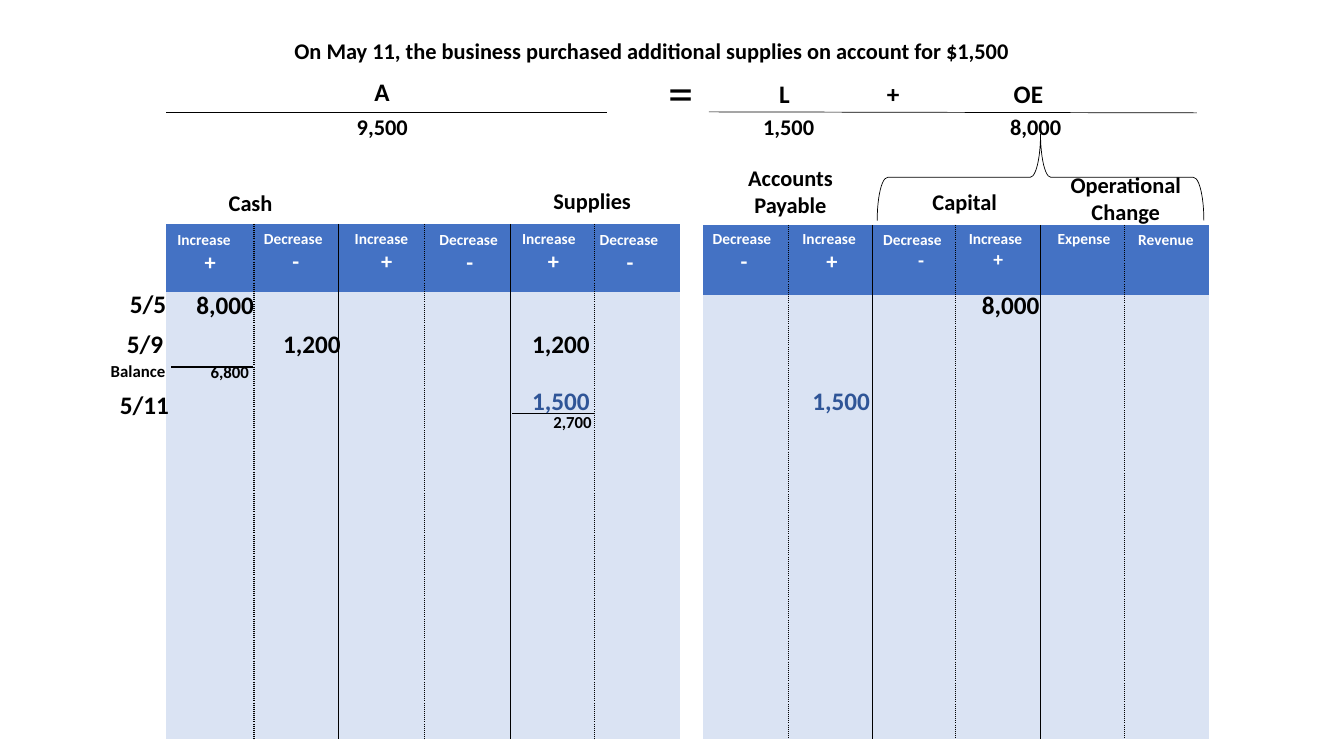
from dataclasses import dataclass

from lxml import etree
from pptx import Presentation
from pptx import util as u
from pptx.dml.color import RGBColor
from pptx.enum import shapes, text
from pptx.oxml.ns import qn

PX = 9144
BLACK, WHITE, BLUE, PALE, ENTRY = "000000", "FFFFFF", "4472C4", "DAE3F3", "2F5597"
LEFT, CENTER = text.PP_ALIGN.LEFT, text.PP_ALIGN.CENTER


@dataclass
class Line:
    words: str
    size: int
    align: text.PP_ALIGN = LEFT


@dataclass
class Label:
    x: int
    y: int
    width: int
    words: str
    size: int = 18
    align: text.PP_ALIGN = LEFT
    color: str = BLACK
    bold: bool = True


@dataclass
class Heading:
    x: int
    y: int
    width: int
    words: str
    sign: str = ""
    sign_size: int = 16


@dataclass
class Grid:
    x: int
    y: int
    columns: list[int]
    rows: list[int]
    header_fill: str = BLUE
    body_fill: str = PALE
    top: str = ""


@dataclass
class Rule:
    x1: int
    y1: int
    x2: int
    y2: int


TITLE = Label(282, 32, 1040, "On May 11, the business purchased additional supplies on account for $1,500", 16)

LEDGERS = [
    Grid(165, 222, [87, 84, 85, 85, 84, 85], [68, 111, 111, 111, 110]),
    Grid(697, 223, [85, 83, 83, 84, 83, 84], [70, 110, 110, 110, 110]),
]

BALANCES = [Grid(x, y, [81], [40], "", "", "solid") for x, y in ((170, 364), (508, 410))]

RULES = [Rule(165, 111, 602, 111), Rule(703, 111, 1187, 112)]

HEADINGS = [
    Heading(166, 223, 85, "Increase", "+"),
    Heading(252, 222, 83, "Decrease", "-"),
    Heading(342, 222, 83, "Increase", "+"),
    Heading(426, 223, 80, "Decrease", "-"),
    Heading(508, 222, 82, "Increase", "+"),
    Heading(585, 223, 80, "Decrease", "-"),
    Heading(697, 222, 82, "Decrease", "-"),
    Heading(786, 222, 78, "Increase", "+"),
    Heading(866, 223, 95, "Decrease", "-", 14),
    Heading(951, 222, 78, "Increase", "+", 14),
    Heading(1039, 222, 89, "Expense"),
    Heading(1119, 223, 82, "Revenue"),
]

LABELS = [
    Label(160, 71, 438, "A", align=CENTER),
    Label(639, 56, 72, "=", 36, CENTER, bold=False),
    Label(743, 73, 70, "L", align=CENTER),
    Label(851, 73, 70, "+", align=CENTER),
    Label(985, 73, 70, "OE", align=CENTER),
    Label(344, 107, 94, "9,500", 16),
    Label(747, 107, 94, "1,500", 16),
    Label(992, 107, 94, "8,000", 16),
    Label(217, 183, 73, "Cash", 16),
    Label(539, 181, 114, "Supplies", 16),
    Label(727, 158, 114, "Accounts\nPayable", 16, CENTER),
    Label(915, 182, 139, "Capital", 16),
    Label(1047, 165, 139, "Operational\nChange", 16, CENTER),
    Label(119, 281, 83, "5/5"),
    Label(185, 282, 84, "8,000"),
    Label(964, 282, 84, "8,000"),
    Label(116, 321, 79, "5/9"),
    Label(271, 321, 84, "1,200"),
    Label(518, 321, 84, "1,200"),
    Label(100, 353, 84, "Balance", 12),
    Label(199, 354, 84, "6,800", 12),
    Label(109, 381, 83, "5/11"),
    Label(518, 377, 84, "1,500", color=ENTRY),
    Label(796, 377, 84, "1,500", color=ENTRY),
    Label(539, 404, 84, "2,700", 12),
]


def emu(*lengths: int) -> list[int]:
    return [length * PX for length in lengths]


def rgb(color: str) -> RGBColor:
    return RGBColor.from_string(color)


def assign(target, values: dict) -> None:
    for name, value in values.items():
        setattr(target, name, value)


def write(box, x: int, y: int, width: int, lines: list[Line], color: str, bold: bool) -> None:
    height = round(sum(line.size for line in lines) * 1.2 / 0.72) + 10
    assign(box, dict(zip(("left", "top", "width", "height"), emu(x, y, width, height))))
    frame = box.text_frame
    assign(frame, {"word_wrap": True, "auto_size": text.MSO_AUTO_SIZE.NONE,
                   "vertical_anchor": text.MSO_ANCHOR.TOP})
    for index, line in enumerate(lines):
        para = frame.add_paragraph() if index else frame.paragraphs[0]
        assign(para, {"alignment": line.align, "line_spacing": 1.0, "space_before": u.Pt(0)})
        span = para.add_run()
        span.text = line.words
        assign(span.font, {"name": "Calibri", "size": u.Pt(line.size), "bold": bold})
        span.font.color.rgb = rgb(color)


def write_label(box, label: Label) -> None:
    lines = [Line(words, label.size, label.align) for words in label.words.split("\n")]
    write(box, label.x, label.y, label.width, lines, label.color, label.bold)


def draw_heading(page, heading: Heading) -> None:
    lines = [Line(heading.words, 11)]
    if heading.sign:
        lines.append(Line(heading.sign, heading.sign_size, CENTER))
    box = page.shapes.add_textbox(0, 0, 0, 0)
    write(box, heading.x, heading.y, heading.width, lines, WHITE, True)


def set_border(cell, side: str, dash: str) -> None:
    border = etree.SubElement(cell._tc.get_or_add_tcPr(), qn(f"a:ln{side}"), w=str(u.Pt(1)))
    if not dash:
        etree.SubElement(border, qn("a:noFill"))
        return
    paint = etree.SubElement(border, qn("a:solidFill"))
    etree.SubElement(paint, qn("a:srgbClr"), val=BLACK)
    etree.SubElement(border, qn("a:prstDash"), val=dash)


def fill_cell(cell, color: str) -> None:
    if not color:
        cell.fill.background()
        return
    cell.fill.solid()
    cell.fill.fore_color.rgb = rgb(color)


def draw_grid(page, grid: Grid) -> None:
    size = emu(grid.x, grid.y, sum(grid.columns), sum(grid.rows))
    table = page.shapes.add_table(len(grid.rows), len(grid.columns), *size).table
    for column, width in zip(table.columns, grid.columns):
        column.width = width * PX
    dashes = ["", *["sysDot" if edge % 2 else "solid" for edge in range(1, len(grid.columns))], ""]
    for row_index, height in enumerate(grid.rows):
        table.rows[row_index].height = height * PX
        for column_index in range(len(grid.columns)):
            cell = table.cell(row_index, column_index)
            borders = {"L": dashes[column_index], "R": dashes[column_index + 1],
                       "T": "" if row_index else grid.top, "B": ""}
            for side, dash in borders.items():
                set_border(cell, side, dash)
            fill_cell(cell, grid.body_fill if row_index else grid.header_fill)


def draw_rule(page, rule: Rule) -> None:
    line = page.shapes.add_connector(shapes.MSO_CONNECTOR.STRAIGHT, *emu(rule.x1, rule.y1, rule.x2, rule.y2))
    line.line.color.rgb = rgb(BLACK)
    line.line.width = u.Pt(0.5)
    etree.SubElement(line._element.spPr, qn("a:effectLst"))


def draw_equity_brace(page) -> None:
    brace = page.shapes.add_shape(shapes.MSO_SHAPE.LEFT_BRACE, *emu(989, 14, 86, 324))
    assign(brace, {"rotation": 90})
    brace.adjustments[0] = 0.12
    brace.shadow.inherit = False
    brace.fill.background()
    brace.line.color.rgb = rgb(BLACK)
    brace.line.width = u.Pt(0.5)


def main() -> None:
    deck = Presentation()
    assign(deck, dict(zip(("slide_width", "slide_height"), emu(1333, 750))))
    page = deck.slides.add_slide(deck.slide_layouts[5])
    write_label(page.shapes.title, TITLE)
    for grid in LEDGERS + BALANCES:
        draw_grid(page, grid)
    for rule in RULES:
        draw_rule(page, rule)
    draw_equity_brace(page)
    for heading in HEADINGS:
        draw_heading(page, heading)
    for label in LABELS:
        write_label(page.shapes.add_textbox(0, 0, 0, 0), label)
    deck.save("out.pptx")


if __name__ == "__main__":
    main()
